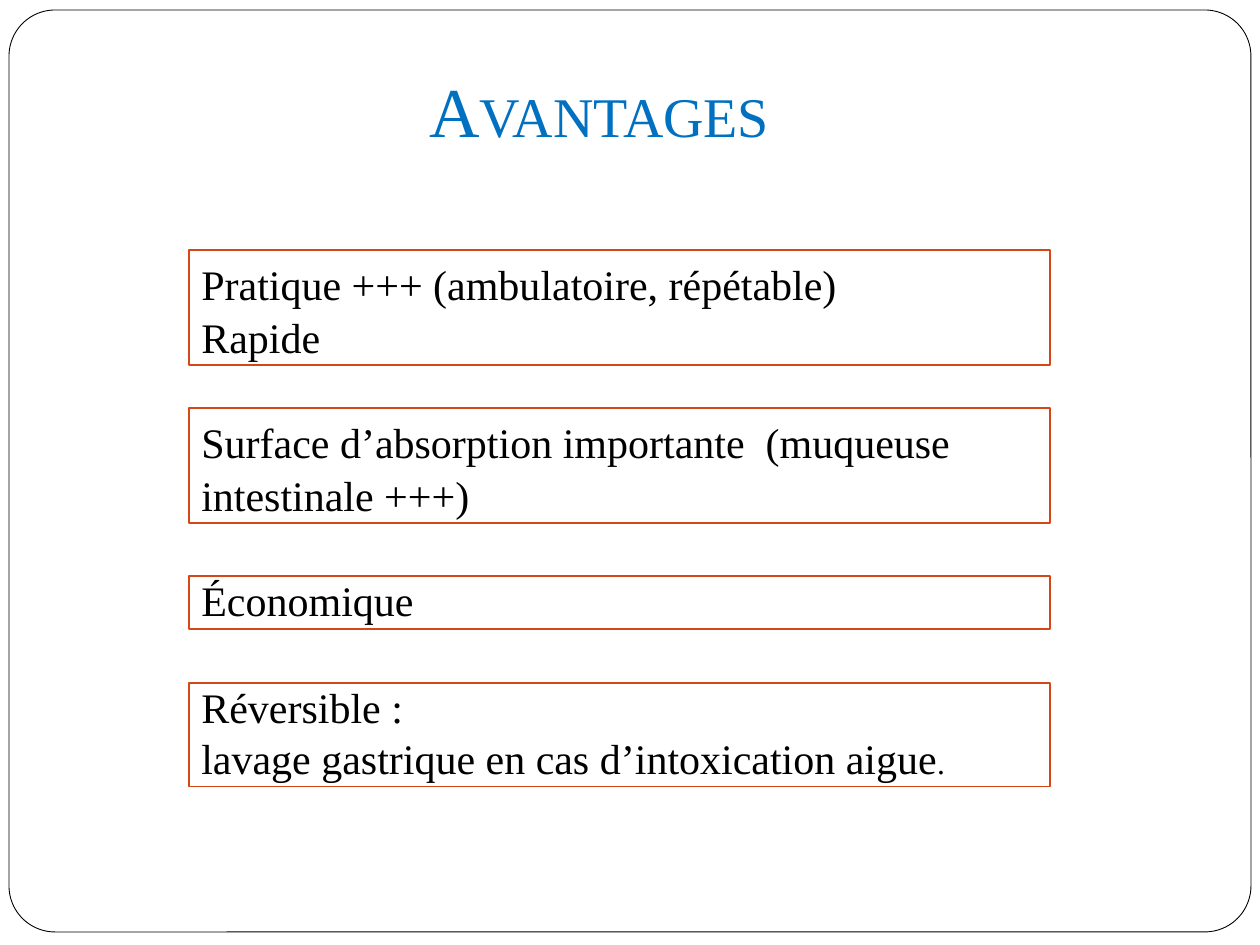
from pptx import Presentation, util as u
from pptx.dml.color import RGBColor
from pptx.enum import shapes, text

PX = u.Inches(1) // 126
BLACK = RGBColor(0x00, 0x00, 0x00)
WHITE = RGBColor(0xFF, 0xFF, 0xFF)
BLUE = RGBColor(0x00, 0x70, 0xC0)
RUST = RGBColor(0xD3, 0x48, 0x17)


def add_text(p, content, size=24, color=BLACK, align=text.PP_ALIGN.LEFT,
             spacing=1.0, before=0, small_caps=False):
    p.alignment = align
    p.line_spacing = spacing
    p.space_before = u.Pt(before)
    r = p.add_run()
    r.text = content
    r.font.name = "Times New Roman"
    r.font.size = u.Pt(size)
    r.font.color.rgb = color
    if small_caps:
        r._r.get_or_add_rPr().set("cap", "small")


def add_box(kind, x, y, w, h, line, width):
    s = slide.shapes.add_shape(kind, x * PX, y * PX, w * PX, h * PX)
    s.shadow.inherit = False
    s.fill.background()
    s.line.color.rgb = line
    s.line.width = u.Pt(width)
    return s


prs = Presentation()
prs.slide_width, prs.slide_height = u.Inches(10), u.Inches(7.5)
slide = prs.slides.add_slide(prs.slide_layouts[6])

# Rounded frame
frame = add_box(shapes.MSO_SHAPE.ROUNDED_RECTANGLE, 9, 10, 1242, 922, BLACK, 0.5)
frame.adjustments[0] = 0.05
frame.fill.solid()
frame.fill.fore_color.rgb = WHITE

# Title
title = slide.shapes.add_textbox(410 * PX, 0, 378 * PX, 158 * PX)
tf = title.text_frame
tf.word_wrap = True
tf.vertical_anchor = text.MSO_ANCHOR.BOTTOM
add_text(tf.paragraphs[0], "Avantages", size=40, color=BLUE,
         align=text.PP_ALIGN.CENTER, small_caps=True)

# Advantages: top, height, line spacing, space before, paragraphs
advantages = [
    (250, 115, 1.05, 0, ["Pratique +++ (ambulatoire, répétable)", "Rapide"]),
    (408, 115, 1.05, 0, ["Surface d’absorption importante  (muqueuse intestinale +++)"]),
    (576, 53, 0.84, 5, ["Économique"]),
    (683, 104, 0.84, 5, ["Réversible :", "lavage gastrique en cas d’intoxication aigue"]),
]
for top, height, spacing, before, lines in advantages:
    s = add_box(shapes.MSO_SHAPE.RECTANGLE, 189, top, 861, height, RUST, 0.75)
    tf = s.text_frame
    tf.word_wrap = True
    tf.vertical_anchor = text.MSO_ANCHOR.TOP
    for i, line in enumerate(lines):
        p = tf.add_paragraph() if i else tf.paragraphs[0]
        add_text(p, line, spacing=spacing, before=before)

# Smaller full stop closing the last sentence
add_text(p, ".", size=18, spacing=spacing, before=before)

prs.save("out.pptx")
